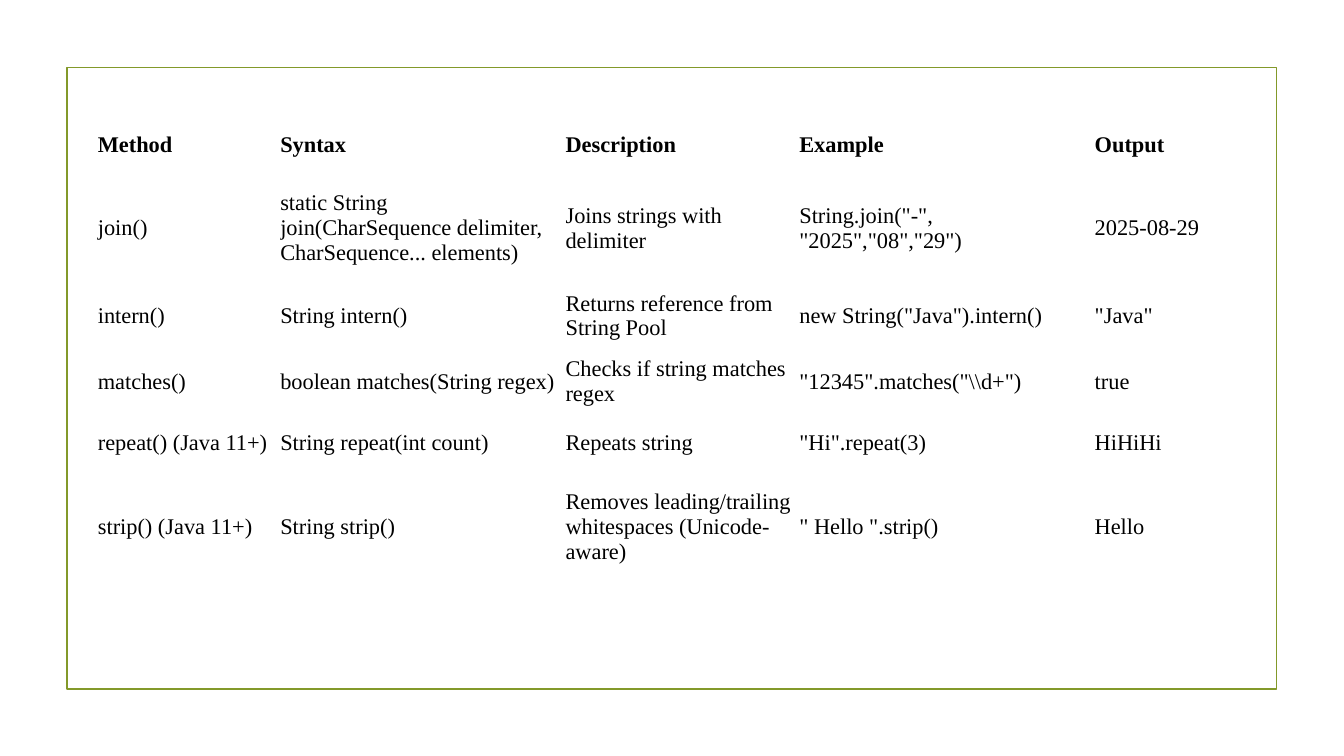
from dataclasses import dataclass

from pptx import Presentation
from pptx.dml.color import RGBColor
from pptx.enum.shapes import MSO_SHAPE
from pptx.enum.text import MSO_ANCHOR
from pptx.util import Pt


@dataclass(frozen=True)
class Theme:
    font: str = "Times New Roman"
    text_size: float = 16
    text_color: RGBColor = RGBColor(0x00, 0x00, 0x00)
    background: RGBColor = RGBColor(0xFF, 0xFF, 0xFF)
    frame_color: RGBColor = RGBColor(0x83, 0x99, 0x2A)
    frame_width: float = 1.25
    cell_margin: float = 0.75


COLUMN_WIDTHS = [130.3, 203.8, 167, 211, 122.4]
ROW_HEIGHTS = [41, 78.5, 46.8, 46.8, 41, 78.5]
STRING_METHODS = [
    ["Method", "Syntax", "Description", "Example", "Output"],
    ["join()",
     "static String join(CharSequence delimiter, CharSequence... elements)",
     "Joins strings with delimiter",
     'String.join("-", "2025","08","29")',
     "2025-08-29"],
    ["intern()", "String intern()", "Returns reference from String Pool",
     'new String("Java").intern()', '"Java"'],
    ["matches()", "boolean matches(String regex)",
     "Checks if string matches regex", r'"12345".matches("\\d+")', "true"],
    ["repeat() (Java 11+)", "String repeat(int count)", "Repeats string",
     '"Hi".repeat(3)', "HiHiHi"],
    ["strip() (Java 11+)", "String strip()",
     "Removes leading/trailing whitespaces (Unicode-aware)",
     '" Hello ".strip()', "Hello"],
]


class SlideBuilder:
    def __init__(self, slide, theme):
        self.slide = slide
        self.theme = theme

    def background(self):
        fill = self.slide.background.fill
        fill.solid()
        fill.fore_color.rgb = self.theme.background

    def frame(self, left, top, width, height):
        shape = self.slide.shapes.add_shape(
            MSO_SHAPE.RECTANGLE, Pt(left), Pt(top), Pt(width), Pt(height))
        shape.shadow.inherit = False
        shape.fill.background()
        shape.line.color.rgb = self.theme.frame_color
        shape.line.width = Pt(self.theme.frame_width)

    def table(self, left, top, column_widths, row_heights, rows):
        """Add an unbanded table whose first row is bold."""
        table = self.slide.shapes.add_table(
            len(rows), len(column_widths), Pt(left), Pt(top),
            Pt(sum(column_widths)), Pt(sum(row_heights))).table
        table.first_row = table.horz_banding = False
        for column, width in zip(table.columns, column_widths):
            column.width = Pt(width)
        for row, height in zip(table.rows, row_heights):
            row.height = Pt(height)
        for row_index, texts in enumerate(rows):
            for column_index, text in enumerate(texts):
                self.cell(table.cell(row_index, column_index), text,
                          bold=row_index == 0)

    def cell(self, cell, text, bold):
        margin = Pt(self.theme.cell_margin)
        cell.margin_left = cell.margin_right = margin
        cell.margin_top = cell.margin_bottom = margin
        cell.vertical_anchor = MSO_ANCHOR.MIDDLE
        cell.fill.background()
        run = cell.text_frame.paragraphs[0].add_run()
        run.text = text
        run.font.name = self.theme.font
        run.font.size = Pt(self.theme.text_size)
        run.font.bold = bold
        run.font.color.rgb = self.theme.text_color


def main():
    presentation = Presentation()
    presentation.slide_width = Pt(960)
    presentation.slide_height = Pt(540)
    slide = presentation.slides.add_slide(presentation.slide_layouts[6])

    builder = SlideBuilder(slide, Theme())
    builder.background()
    builder.frame(47.8, 48.2, 864, 444.2)
    builder.table(69.2, 82.8, COLUMN_WIDTHS, ROW_HEIGHTS, STRING_METHODS)

    presentation.save("out.pptx")


if __name__ == "__main__":
    main()
